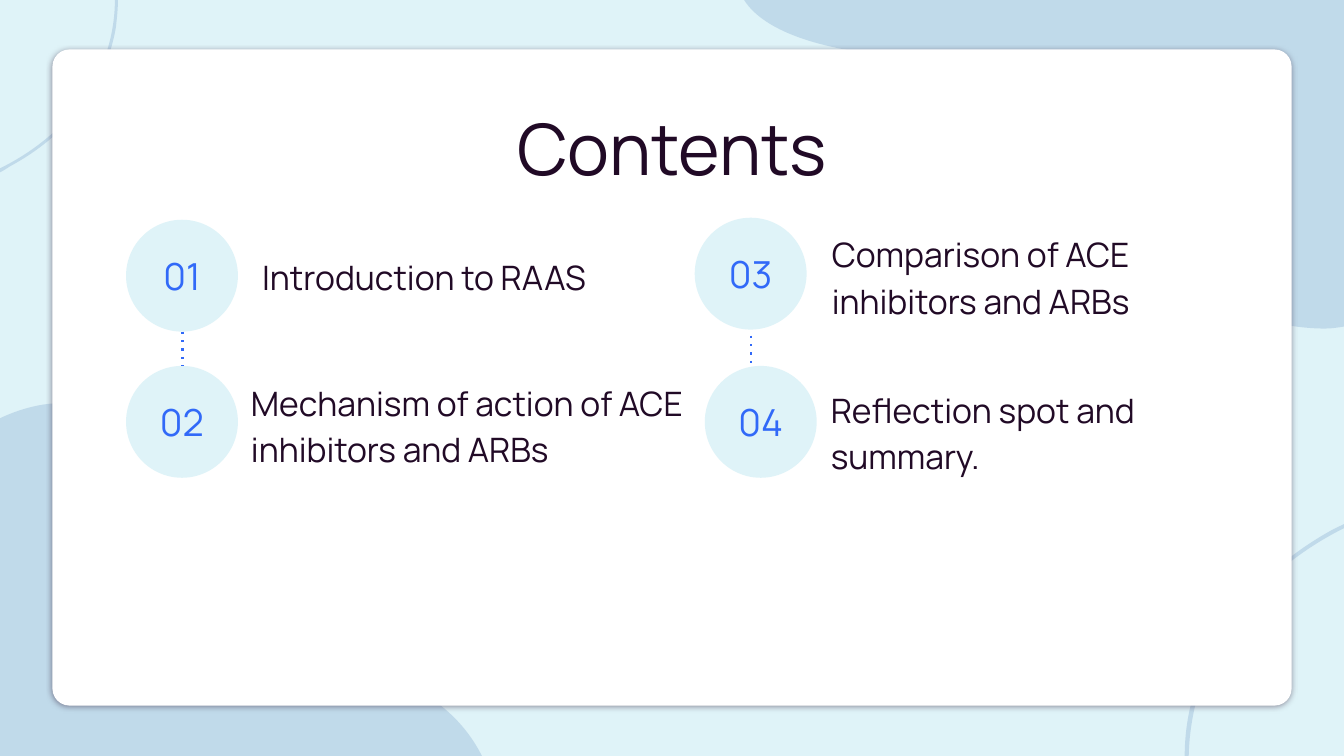
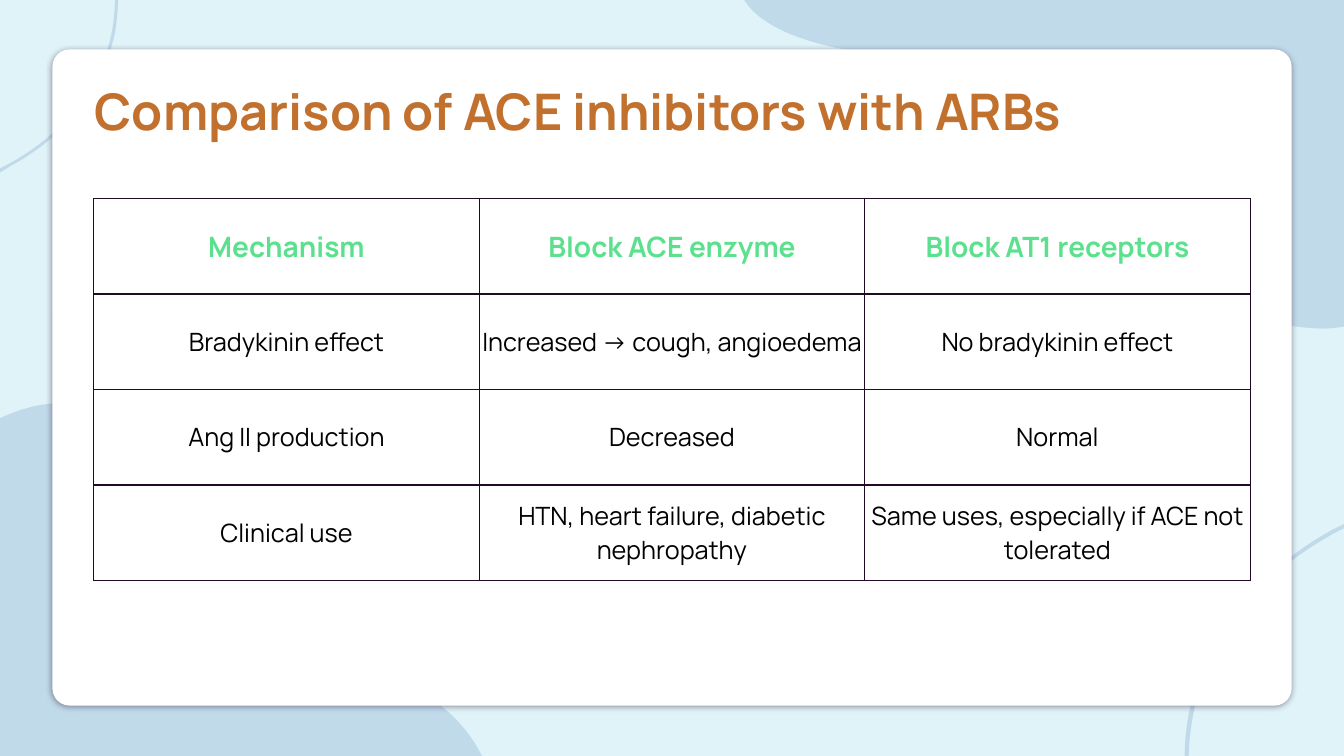
import pptx
import pptx.dml.color
import pptx.enum.shapes
import pptx.enum.text
import pptx.oxml
import pptx.oxml.ns
import pptx.util
from lxml import etree

EMU_PER_PX = 9144
FONT = "Manrope"
FIRST_MASTER_ID = 101
COLORS = {
    "sky": "DFF3F8",
    "wave": "A0BFDB",
    "card": "FFFFFF",
    "ink": "210A26",
    "blue": "3169F8",
    "orange": "C1712D",
    "green": "5BE18E",
    "black": "000000",
}
ALIGN = pptx.enum.text.PP_ALIGN
ANCHOR = pptx.enum.text.MSO_ANCHOR
SHAPE = pptx.enum.shapes.MSO_SHAPE
qn = pptx.oxml.ns.qn

WAVES = [
    [(1179, 750), (1180, 702, 1196, 653, 1225, 614), (1253, 575, 1291, 545, 1333, 524),
     (1333, 520), (1329, 522, 1324, 524, 1319, 527), (1285, 546, 1253, 572, 1228, 603),
     (1203, 636, 1185, 673, 1178, 714), (1176, 726, 1175, 738, 1175, 750)],
    [(60, 400), (29, 400, 0, 415, 0, 415), (0, 750), (478, 750),
     (417, 629, 228, 652, 149, 628), (71, 605, 157, 489, 115, 427),
     (100, 406, 80, 400, 60, 400)],
    [(738, 0), (760, 35, 832, 58, 949, 58), (953, 58, 958, 58, 962, 58),
     (964, 58, 965, 58, 967, 58), (1142, 58, 1069, 213, 1199, 294),
     (1234, 316, 1279, 326, 1314, 326), (1321, 326, 1327, 325, 1333, 324), (1333, 0)],
    [(114, 0), (114, 36, 102, 72, 81, 101), (60, 129, 31, 152, 0, 167), (0, 171),
     (4, 169, 7, 167, 10, 165), (36, 151, 60, 132, 78, 109),
     (97, 85, 110, 57, 115, 27), (116, 18, 117, 9, 117, 0)],
]
TOPICS = [
    ("01", (125, 218), (247, 216, 442, 111), "Introduction to RAAS"),
    ("02", (125, 363), (236, 355, 474, 129), "Mechanism of action of ACE inhibitors and ARBs"),
    ("03", (689, 216), (812, 207, 431, 131), "Comparison of ACE inhibitors and ARBs"),
    ("04", (699, 363), (811, 371, 465, 111), "Reflection spot and summary."),
]
LINKS = [(181, 329, 363), (745, 333, 361)]
COMPARISON = [
    ("Mechanism", "Block ACE enzyme", "Block AT1 receptors"),
    ("Bradykinin effect", "Increased → cough, angioedema", "No bradykinin effect"),
    ("Ang II production", "Decreased", "Normal"),
    ("Clinical use", "HTN, heart failure, diabetic nephropathy",
     "Same uses, especially if ACE not tolerated"),
]


def px(value):
    return pptx.util.Emu(round(value * EMU_PER_PX))


def box(*lengths):
    return [px(length) for length in lengths]


def rgb(name):
    return pptx.dml.color.RGBColor.from_string(COLORS[name])


def add_xml(parent, xml):
    namespace = pptx.oxml.ns.nsdecls("a")
    parent.append(pptx.oxml.parse_xml(xml.replace(" ", f" {namespace} ", 1)))


def fill_solid(shape, color):
    shape.shadow.inherit = False
    shape.fill.solid()
    shape.fill.fore_color.rgb = rgb(color)
    shape.line.fill.background()


def style(paragraph, text, size, color, align, bold):
    paragraph.text = text
    paragraph.alignment = align
    paragraph.font.name = FONT
    paragraph.font.size = pptx.util.Pt(size)
    paragraph.font.bold = bold
    paragraph.font.color.rgb = rgb(color)


def write(frame, text, size, color, align=ALIGN.LEFT, bold=False):
    frame.word_wrap = True
    frame.margin_left = frame.margin_right = px(13)
    frame.margin_top = frame.margin_bottom = px(13)
    style(frame.paragraphs[0], text, size, color, align, bold)


def add_text(slide, area, text, size, color, anchor=ANCHOR.TOP, **options):
    frame = slide.shapes.add_textbox(*box(*area)).text_frame
    frame.vertical_anchor = anchor
    write(frame, text, size, color, **options)
    frame.paragraphs[0].line_spacing = 1.15


def add_wave(slide, outline):
    start, *segments = outline
    points = [box(*segment[i:i + 2]) for segment in segments
              for i in range(0, len(segment), 2)]
    builder = slide.shapes.build_freeform(*box(*start))
    builder.add_line_segments(points, close=True)
    wave = builder.convert_to_shape()
    fill_solid(wave, "wave")
    properties = wave.element.spPr
    add_xml(properties.find(".//" + qn("a:srgbClr")), '<a:alpha val="48000"/>')
    steps = iter(list(properties.iter(qn("a:lnTo"))))
    for segment in segments:
        step = next(steps)
        if len(segment) == 6:
            step.addprevious(etree.Element(qn("a:cubicBezTo")))
            curve = step.getprevious()
            for control in (step, next(steps), next(steps)):
                curve.append(control[0])
                control.getparent().remove(control)
    return wave


def add_card(slide):
    card = slide.shapes.add_shape(SHAPE.ROUNDED_RECTANGLE, *box(52, 49, 1229, 651))
    card.adjustments[0] = 0.026
    fill_solid(card, "card")
    add_xml(card.element.spPr.find(qn("a:effectLst")),
            '<a:outerShdw blurRad="57150" dist="19050" dir="5400000" '
            f'rotWithShape="0"><a:srgbClr val="{COLORS["ink"]}">'
            '<a:alpha val="50000"/></a:srgbClr></a:outerShdw>')
    return card


def decorate_master(master, slide):
    background = master.background.fill
    background.solid()
    background.fore_color.rgb = rgb("sky")
    decorations = [add_wave(slide, outline) for outline in WAVES] + [add_card(slide)]
    for index, shape in enumerate(decorations):
        shape.element.nvSpPr.cNvPr.set("id", str(FIRST_MASTER_ID + index))
        master.shapes.element.insert(2 + index, shape.element)


def add_badge(slide, left, top, number):
    badge = slide.shapes.add_shape(SHAPE.OVAL, *box(left, top, 111, 111))
    fill_solid(badge, "sky")
    badge.text_frame.vertical_anchor = ANCHOR.MIDDLE
    write(badge.text_frame, number, 26.6, "blue", ALIGN.CENTER)


def add_dotted_link(slide, x, top, bottom):
    link = slide.shapes.add_connector(
        pptx.enum.shapes.MSO_CONNECTOR.STRAIGHT, *box(x, top, x, bottom))
    link.line.width = pptx.util.Pt(1.5)
    link.line.color.rgb = rgb("blue")
    properties = link.element.spPr
    etree.SubElement(properties.find(qn("a:ln")), qn("a:prstDash")).set("val", "dot")
    etree.SubElement(properties, qn("a:effectLst"))


def format_cell(cell, text, header):
    properties = cell._tc.get_or_add_tcPr()
    for side in "LRTB":
        add_xml(properties, f'<a:ln{side} w="12700"><a:solidFill>'
                            f'<a:srgbClr val="{COLORS["ink"]}"/></a:solidFill></a:ln{side}>')
    cell.fill.background()
    cell.margin_left = cell.margin_right = cell.margin_top = cell.margin_bottom = 0
    cell.vertical_anchor = ANCHOR.MIDDLE
    size, color = (20, "green") if header else (18, "black")
    style(cell.text_frame.paragraphs[0], text, size, color, ALIGN.CENTER, header)


def add_table(slide, rows, area):
    table = slide.shapes.add_table(len(rows), len(rows[0]), *box(*area)).table
    table.first_row = table.horz_banding = False
    for row_index, row in enumerate(rows):
        for column_index, text in enumerate(row):
            format_cell(table.cell(row_index, column_index), text, row_index == 0)


def build_contents(slide):
    add_text(slide, (104, 78, 1125, 104), "Contents", 50.6, "ink", align=ALIGN.CENTER)
    for number, position, area, topic in TOPICS:
        add_text(slide, area, topic, 24, "ink", ANCHOR.MIDDLE)
        add_badge(slide, *position, number)
    for link in LINKS:
        add_dotted_link(slide, *link)


def build_comparison(slide):
    add_text(slide, (81, 58, 1125, 104), "Comparison of ACE inhibitors with ARBs",
             36, "orange", bold=True)
    add_table(slide, COMPARISON, (93, 197, 1147, 379))


def main():
    presentation = pptx.Presentation()
    presentation.slide_width, presentation.slide_height = box(1333, 750)
    blank = presentation.slide_layouts[6]
    contents, comparison = [presentation.slides.add_slide(blank) for _ in range(2)]
    decorate_master(presentation.slide_master, contents)
    build_contents(contents)
    build_comparison(comparison)
    presentation.save("out.pptx")


if __name__ == "__main__":
    main()
